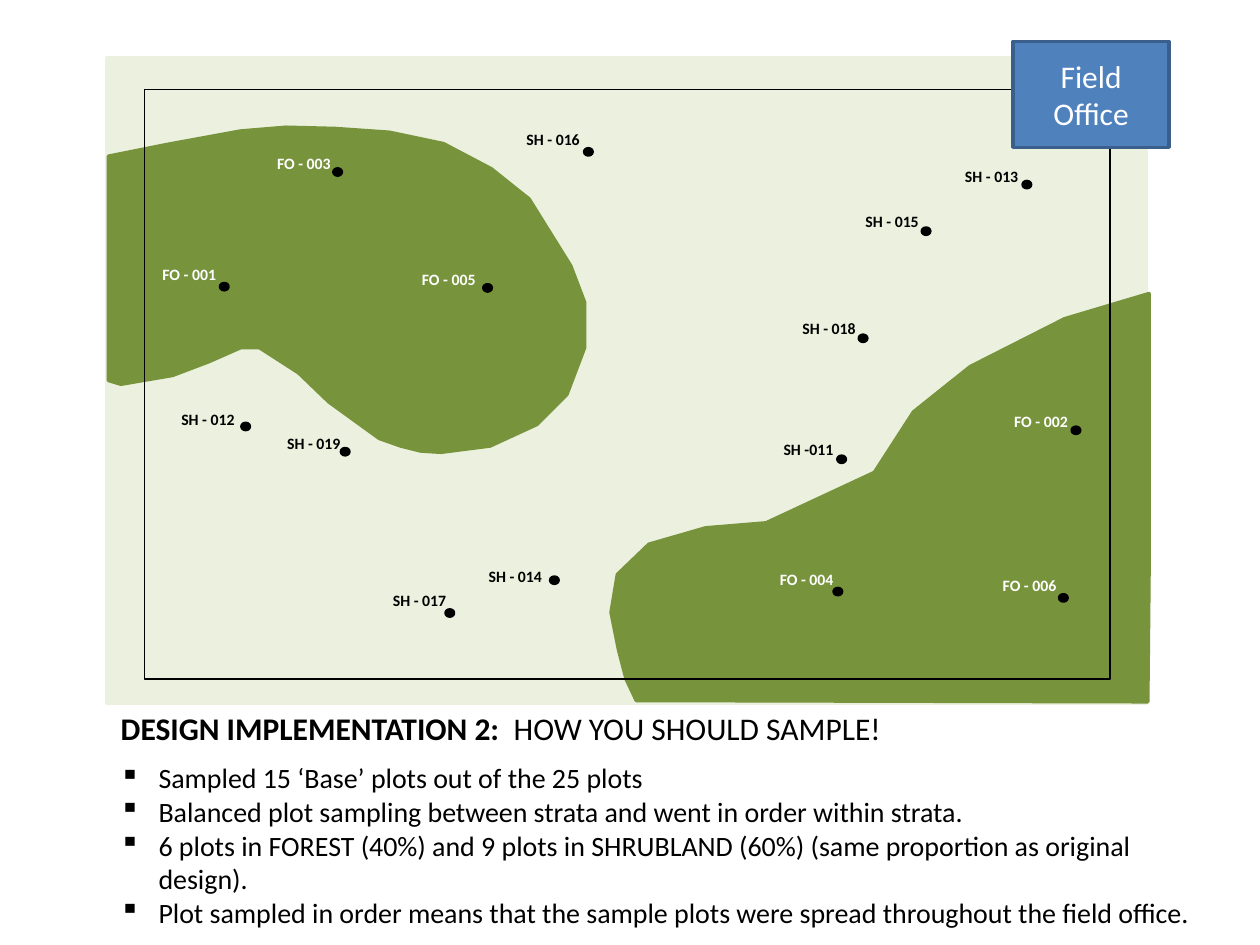
import pptx
import pptx.dml.color
import pptx.enum.shapes
import pptx.enum.text
import pptx.util
from lxml import etree

Inches = pptx.util.Inches
Pt = pptx.util.Pt
SHAPE = pptx.enum.shapes.MSO_SHAPE
ALIGN = pptx.enum.text.PP_ALIGN
ANCHOR = pptx.enum.text.MSO_ANCHOR
AUTO_SIZE = pptx.enum.text.MSO_AUTO_SIZE

SHRUBLAND = "EBF1DE"
FOREST = "77933C"
BLACK = "000000"
WHITE = "FFFFFF"
DOT_SIZE = (0.06, 0.05)
LABEL_HEIGHT = 0.25

WEST_FOREST = [
    (0.86, 1.24), (1.31, 1.15), (1.91, 1.04), (2.27, 1.01), (2.66, 1.02),
    (3.09, 1.05), (3.52, 1.14), (3.9, 1.34), (4.2, 1.58), (4.53, 2.11),
    (4.64, 2.4), (4.64, 2.76), (4.5, 3.13), (4.26, 3.37), (3.89, 3.54),
    (3.5, 3.59), (3.34, 3.58), (3.18, 3.54), (3.01, 3.48), (2.61, 3.19),
    (2.37, 2.96), (2.06, 2.76), (1.91, 2.76), (1.66, 2.87), (1.37, 2.98),
    (0.96, 3.05), (0.86, 3.02),
]
EAST_FOREST = [
    (9.12, 2.33), (8.45, 2.53), (7.7, 2.91), (7.25, 3.27), (6.94, 3.75),
    (6.08, 4.15), (5.6, 4.19), (5.15, 4.32), (4.9, 4.56), (4.85, 4.86),
    (4.91, 5.16), (4.97, 5.39), (5.05, 5.56), (9.11, 5.57), (9.12, 4.5),
]

# Plot name, dot left and top, label left, top and width
PLOTS = [
    ("FO - 001", 1.75, 2.25, 1.19, 2.05, 0.72),
    ("FO - 002", 8.51, 3.39, 7.95, 3.22, 0.71),
    ("FO - 003", 2.65, 1.34, 2.1, 1.17, 0.68),
    ("FO - 004", 6.62, 4.67, 6.09, 4.47, 0.71),
    ("FO - 005", 3.84, 2.26, 3.25, 2.09, 0.73),
    ("FO - 006", 8.41, 4.72, 7.86, 4.52, 0.74),
    ("SH -011", 6.65, 3.62, 6.12, 3.44, 0.89),
    ("SH - 012", 1.92, 3.36, 1.34, 3.2, 0.68),
    ("SH - 013", 8.12, 1.44, 7.56, 1.27, 0.72),
    ("SH - 014", 4.37, 4.58, 3.78, 4.45, 0.8),
    ("SH - 015", 7.32, 1.81, 6.77, 1.63, 0.69),
    ("SH - 016", 4.64, 1.18, 4.08, 0.98, 0.78),
    ("SH - 017", 3.54, 4.84, 3.02, 4.64, 0.83),
    ("SH - 018", 6.82, 2.66, 6.27, 2.48, 0.83),
    ("SH - 019", 2.71, 3.56, 2.18, 3.39, 0.82),
]

FINDINGS = [
    "Sampled 15 ‘Base’ plots out of the 25 plots",
    "Balanced plot sampling between strata and went in order within strata.",
    "6 plots in FOREST (40%) and 9 plots in SHRUBLAND (60%) "
    "(same proportion as original design).",
    "Plot sampled in order means that the sample plots were spread "
    "throughout the field office.",
]


def color(hex_string):
    return pptx.dml.color.RGBColor.from_string(hex_string)


def paint(shape, fill, line, line_width=2):
    shape.shadow.inherit = False
    if fill:
        shape.fill.solid()
        shape.fill.fore_color.rgb = color(fill)
    else:
        shape.fill.background()
    shape.line.color.rgb = color(line)
    shape.line.width = Pt(line_width)


def add_block(slide, preset, box, fill, line, line_width=2):
    shape = slide.shapes.add_shape(preset, *map(Inches, box))
    paint(shape, fill, line, line_width)
    return shape


def add_forest(slide, outline):
    start, *corners = [(Inches(x), Inches(y)) for x, y in outline]
    builder = slide.shapes.build_freeform(*start)
    builder.add_line_segments(corners, close=True)
    paint(builder.convert_to_shape(), FOREST, FOREST)


def add_text_box(slide, box):
    frame = slide.shapes.add_textbox(*map(Inches, box)).text_frame
    frame.word_wrap = True
    frame.auto_size = AUTO_SIZE.SHAPE_TO_FIT_TEXT
    return frame


def write(paragraph, text, size=16, fill=BLACK, bold=False, align=None):
    run = paragraph.add_run()
    run.text = text
    run.font.name = "Calibri"
    run.font.size = Pt(size)
    run.font.bold = bold
    run.font.color.rgb = color(fill)
    if align is not None:
        paragraph.alignment = align


def add_bullet(paragraph, indent=0.31):
    properties = paragraph._p.get_or_add_pPr()
    properties.set("marL", str(Inches(indent)))
    properties.set("indent", str(-Inches(indent)))
    bullet = etree.SubElement(properties, pptx.oxml.ns.qn("a:buChar"))
    bullet.set("char", "▪")


def add_plot(slide, name, dot_left, dot_top, left, top, width):
    add_block(slide, SHAPE.OVAL, (dot_left, dot_top, *DOT_SIZE), BLACK, BLACK)
    label = add_text_box(slide, (left, top, width, LABEL_HEIGHT))
    label_color = WHITE if name.startswith("FO") else BLACK
    write(label.paragraphs[0], name, size=9, fill=label_color, bold=True)


def add_map(slide):
    add_block(slide, SHAPE.RECTANGLE, (0.85, 0.46, 8.25, 5.12),
              SHRUBLAND, SHRUBLAND)
    add_forest(slide, WEST_FOREST)
    add_forest(slide, EAST_FOREST)
    add_block(slide, SHAPE.RECTANGLE, (1.15, 0.71, 7.66, 4.68),
              None, BLACK, 0.75)
    for plot in PLOTS:
        add_plot(slide, *plot)


def add_field_office(slide):
    office = add_block(slide, SHAPE.RECTANGLE, (8.04, 0.33, 1.24, 0.84),
                       "4F81BD", "3A5F8C")
    frame = office.text_frame
    frame.word_wrap = True
    frame.vertical_anchor = ANCHOR.MIDDLE
    write(frame.paragraphs[0], "Field Office", size=18, fill=WHITE,
          align=ALIGN.CENTER)


def add_findings(slide):
    frame = add_text_box(slide, (0.85, 5.99, 8.98, 1.72))
    for index, finding in enumerate(FINDINGS):
        paragraph = frame.add_paragraph() if index else frame.paragraphs[0]
        add_bullet(paragraph)
        write(paragraph, finding)


def add_heading(slide):
    heading = add_text_box(slide, (0.86, 5.58, 8.27, 0.4)).paragraphs[0]
    write(heading, "DESIGN IMPLEMENTATION 2:  ", size=18, bold=True)
    write(heading, "HOW YOU SHOULD SAMPLE!", size=18)


def main():
    presentation = pptx.Presentation()
    presentation.slide_width = Inches(10)
    presentation.slide_height = Inches(7.5)
    slide = presentation.slides.add_slide(presentation.slide_layouts[6])

    # Map of the strata with the sampled plots
    add_map(slide)
    add_field_office(slide)

    # Explanation below the map
    add_findings(slide)
    add_heading(slide)

    presentation.save("out.pptx")


if __name__ == "__main__":
    main()
